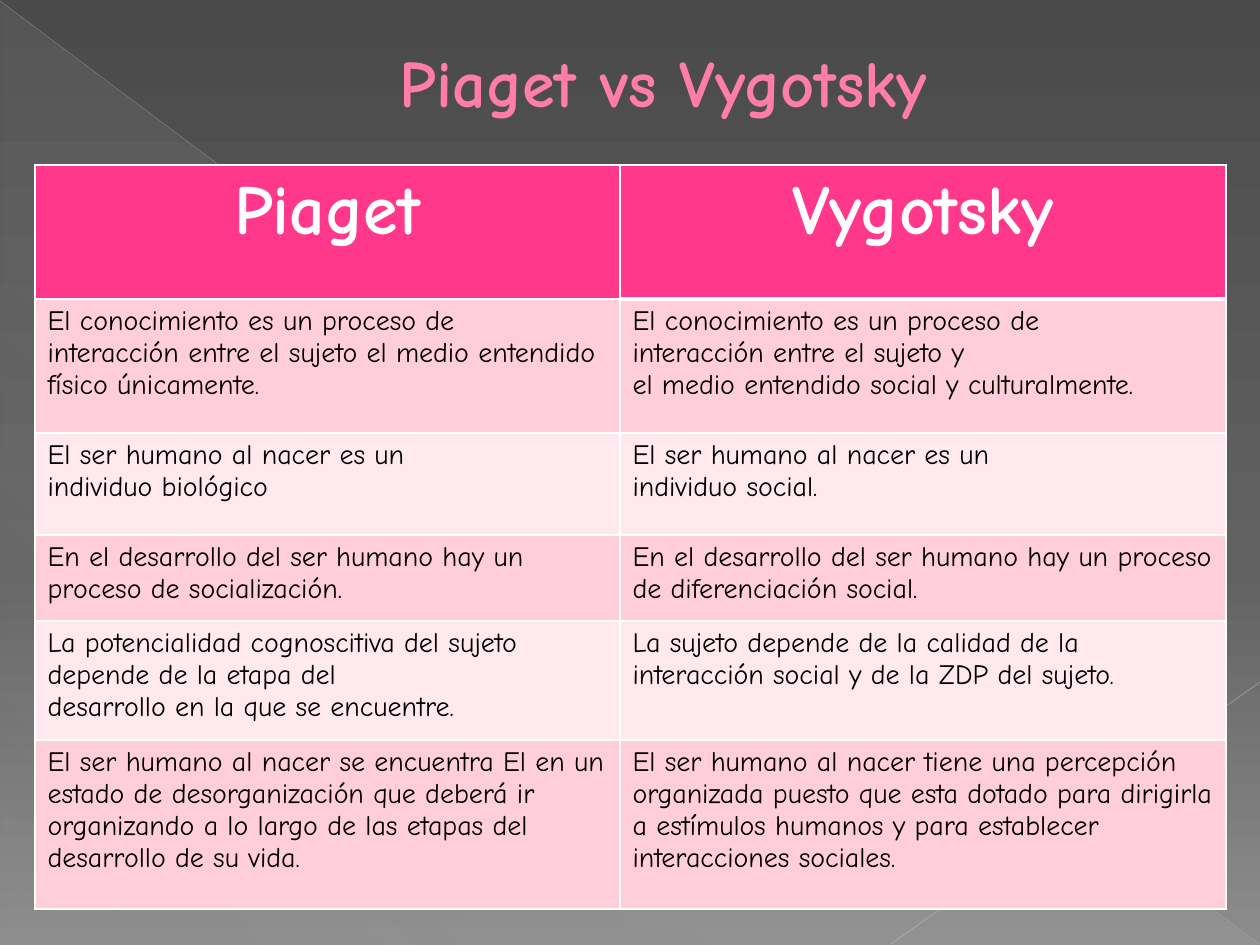
from dataclasses import dataclass

from lxml import etree
from pptx import Presentation
from pptx.dml.color import RGBColor
from pptx.enum.shapes import MSO_CONNECTOR, MSO_SHAPE
from pptx.enum.text import MSO_ANCHOR, PP_ALIGN
from pptx.oxml.ns import qn
from pptx.util import Pt

LINE = MSO_CONNECTOR.STRAIGHT
CORNER = MSO_SHAPE.RIGHT_TRIANGLE
MIDDLE = MSO_ANCHOR.MIDDLE
CENTER, LEFT = PP_ALIGN.CENTER, PP_ALIGN.LEFT
SCALE = 914400 / 126


@dataclass(frozen=True)
class Theme:
    """Colours, font and type sizes of the slide."""
    font: str = "Comic Neue"
    title: str = "FF7DA7"
    edge: str = "B12761"
    head: str = "FF388C"
    bands: tuple = ("FFCEDA", "FFE8EE")
    white: str = "FFFFFF"
    black: str = "000000"
    sheen: str = "D2D2D2"
    back: tuple = ((0, "4A4A4A", 100), (60, "626262", 100), (100, "8C8C8C", 100))
    title_size: float = 37.8
    head_size: float = 40
    body_size: float = 16


THEME = Theme()
COLS = (585, 606)
ROWS = (134, 134, 102, 86, 119, 169)
HEADS = ("Piaget", "Vygotsky")
BODY = (
    (("El conocimiento es un proceso de",
      "interacción entre el sujeto el medio entendido físico únicamente."),
     ("El conocimiento es un proceso de",
      "interacción entre el sujeto y",
      "el medio entendido social y culturalmente.")),
    (("El ser humano al nacer es un", "individuo biológico"),
     ("El ser humano al nacer es un", "individuo social.")),
    (("En el desarrollo del ser humano hay un proceso de socialización.",),
     ("En el desarrollo del ser humano hay un proceso de diferenciación social.",)),
    (("La potencialidad cognoscitiva del sujeto depende de la etapa del",
      "desarrollo en la que se encuentre."),
     ("La sujeto depende de la calidad de la interacción social y de la ZDP del sujeto.",)),
    (("El ser humano al nacer se encuentra El en un estado de desorganización que "
      "deberá ir organizando a lo largo de las etapas del desarrollo de su vida.",),
     ("El ser humano al nacer tiene una percepción organizada puesto que esta dotado "
      "para dirigirla a estímulos humanos y para establecer interacciones sociales.",)),
)


def px(num):
    """Turn pixels into EMU."""
    return round(num * SCALE)


def node(root, tag, **attrs):
    """Add a child element with the given attributes."""
    return etree.SubElement(root, qn(tag), {k: str(v) for k, v in attrs.items()})


def tint(root, color, alpha=100):
    """Add a colour with its opacity in percent."""
    clr = node(root, "a:srgbClr", val=color)
    if alpha < 100:
        node(clr, "a:alpha", val=alpha * 1000)


def blend(fill, props, stops, angle):
    """Put a linear gradient in place of a plain fill."""
    fill.solid()
    old = props.find(qn("a:solidFill"))
    grad = etree.Element(qn("a:gradFill"), rotWithShape="1")
    items = node(grad, "a:gsLst")
    for pos, color, alpha in stops:
        tint(node(items, "a:gs", pos=pos * 1000), color, alpha)
    node(grad, "a:lin", ang=angle * 60000, scaled=0)
    props.replace(old, grad)


def add_run(para, text, size, color, bold):
    """Add one formatted run."""
    run = para.add_run()
    run.text = text
    font = run.font
    font.name, font.size, font.bold = THEME.font, Pt(size), bold
    font.color.rgb = RGBColor.from_string(color)
    return run


def add_corner(slide):
    """Draw the pale triangle behind the content."""
    shape = slide.shapes.add_shape(CORNER, px(1), px(2), px(1258), px(943))
    shape.shadow.inherit = False
    shape.line.fill.background()
    stops = [(pos, THEME.sheen, alpha) for pos, alpha in ((0, 10), (70, 8), (100, 1))]
    blend(shape.fill, shape._element.spPr, stops, 133)


def add_line(slide, ends, color, width, alpha):
    """Draw a thin translucent line."""
    line = slide.shapes.add_connector(LINE, *map(px, ends))
    line.line.width = Pt(width)
    line.line.color.rgb = RGBColor.from_string(color)
    props = line._element.spPr
    node(next(props.iter(qn("a:srgbClr"))), "a:alpha", val=alpha * 1000)
    node(props, "a:effectLst")


def add_title(slide, text):
    """Place and format the title."""
    title = slide.shapes.title
    title.left, title.top, title.width, title.height = map(px, (63, 37, 1134, 88))
    frame = title.text_frame
    frame.word_wrap, frame.vertical_anchor = True, MIDDLE
    para = frame.paragraphs[0]
    para.alignment = CENTER
    props = para._p.get_or_add_pPr()
    props.set("marL", str(px(67)))
    props.set("indent", "0")
    run = add_run(para, text, THEME.title_size, THEME.title, True)
    edge = etree.Element(qn("a:ln"), w=str(Pt(0.5)))
    tint(node(edge, "a:solidFill"), THEME.edge)
    run._r.get_or_add_rPr().insert(0, edge)


def set_edges(cell, top, base):
    """Give a cell white borders."""
    props = cell._tc.get_or_add_tcPr()
    for side, width in zip("LRTB", (1, 1, top, base)):
        tint(node(node(props, f"a:ln{side}", w=Pt(width)), "a:solidFill"), THEME.white)


def fill_cell(cell, lines, color, style, align):
    """Fill a cell and write one paragraph per line."""
    cell.fill.solid()
    cell.fill.fore_color.rgb = RGBColor.from_string(color)
    frame = cell.text_frame
    for num, text in enumerate(lines):
        para = frame.add_paragraph() if num else frame.paragraphs[0]
        para.alignment = align
        add_run(para, text, *style)


def add_grid(slide):
    """Build the comparison table."""
    spot = map(px, (35, 165, sum(COLS), sum(ROWS)))
    table = slide.shapes.add_table(len(ROWS), len(COLS), *spot).table
    for col, width in zip(table.columns, COLS):
        col.width = px(width)
    for row, height in zip(table.rows, ROWS):
        row.height = px(height)
    head = (THEME.head_size, THEME.white, True)
    body = (THEME.body_size, THEME.black, False)
    for y in range(len(ROWS)):
        for x in range(len(COLS)):
            cell = table.cell(y, x)
            set_edges(cell, 3 if (y, x) == (1, 1) else 1, 3 if (y, x) == (0, 1) else 1)
            if y == 0:
                fill_cell(cell, [HEADS[x]], THEME.head, head, CENTER)
            else:
                fill_cell(cell, BODY[y - 1][x], THEME.bands[(y - 1) % 2], body, LEFT)


def main():
    """Build and save the slide."""
    deck = Presentation()
    deck.slide_width, deck.slide_height = px(1260), px(945)
    slide = deck.slides.add_slide(deck.slide_layouts[5])
    fill = slide.background.fill
    fill.solid()
    blend(fill, next(slide._element.iter(qn("p:bgPr"))), THEME.back, 90)
    add_corner(slide)
    add_line(slide, (0, 1, 1259, 944), "BFBFBF", 0.39, 35)
    add_line(slide, (1260, 682, 891, 944), "C6C6C6", 0.47, 45)
    add_title(slide, "Piaget vs Vygotsky")
    add_grid(slide)
    deck.save("out.pptx")


if __name__ == "__main__":
    main()
